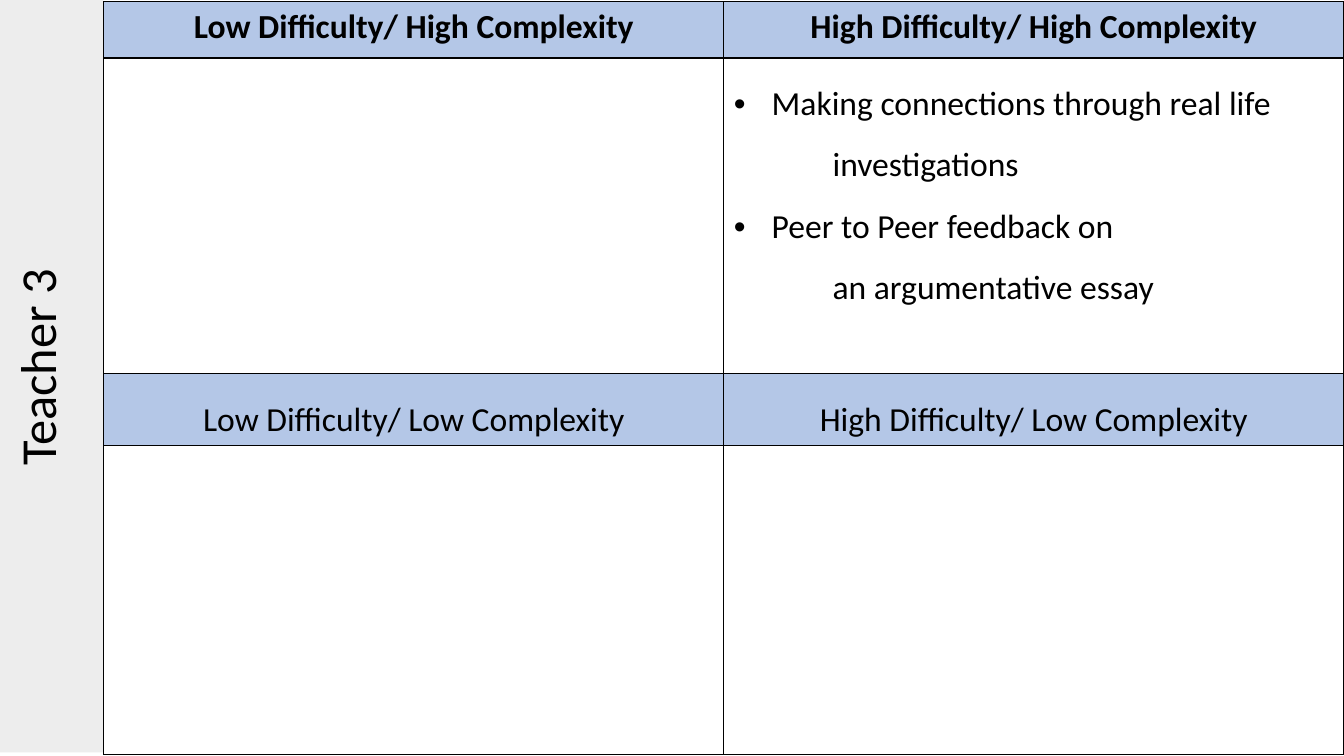
from lxml.etree import SubElement
from pptx import Presentation
from pptx.dml.color import RGBColor
from pptx.enum.shapes import MSO_SHAPE
from pptx.enum.text import MSO_ANCHOR, PP_ALIGN
from pptx.oxml.ns import qn
from pptx.util import Pt

COLORS = {"text": "000000", "border": "000000", "banner": "EDEDED",
          "heading": "B4C7E7", "body": "FFFFFF"}
FONT = "Calibri"
COLUMN_WIDTH = 442.8
ROW_HEIGHTS = [40.3, 225.4, 49.7, 221]
HEADINGS = {
    0: ["Low Difficulty/ High Complexity", "High Difficulty/ High Complexity"],
    2: ["Low Difficulty/ Low Complexity", "High Difficulty/ Low Complexity"],
}
ACTIVITIES = [
    ("Making connections through real life", "investigations"),
    ("Peer to Peer feedback on", "an argumentative essay"),
]


def set_fill(target, color):
    target.fill.solid()
    target.fill.fore_color.rgb = RGBColor.from_string(COLORS[color])


def add_run(paragraph, text, size, bold=False):
    run = paragraph.add_run()
    run.text = text
    run.font.name = FONT
    run.font.size = Pt(size)
    run.font.bold = bold
    run.font.color.rgb = RGBColor.from_string(COLORS["text"])


def add_banner(slide, text):
    shape = slide.shapes.add_shape(
        MSO_SHAPE.RECTANGLE, Pt(-238.3), Pt(225.3), Pt(550), Pt(74.2))
    shape.rotation = 270
    shape.shadow.inherit = False
    set_fill(shape, "banner")
    shape.line.fill.background()
    frame = shape.text_frame
    frame.word_wrap = True
    frame.vertical_anchor = MSO_ANCHOR.MIDDLE
    frame.margin_bottom = Pt(25.6)
    paragraph = frame.paragraphs[0]
    paragraph.alignment = PP_ALIGN.CENTER
    add_run(paragraph, text, 36)


def set_borders(cell):
    properties = cell._tc.get_or_add_tcPr()
    for side in ("a:lnL", "a:lnR", "a:lnT", "a:lnB"):
        line = SubElement(properties, qn(side), w=str(Pt(1)))
        fill = SubElement(line, qn("a:solidFill"))
        SubElement(fill, qn("a:srgbClr"), val=COLORS["border"])


def set_indent(paragraph, left, first=0, bullet=None):
    properties = paragraph._p.get_or_add_pPr()
    properties.set("marL", str(Pt(left)))
    properties.set("indent", str(Pt(first)))
    if bullet:
        SubElement(properties, qn("a:buFont"), typeface="Arial")
        SubElement(properties, qn("a:buChar"), char=bullet)


def write_heading(cell, text, is_first):
    paragraph = cell.text_frame.paragraphs[0]
    paragraph.alignment = PP_ALIGN.CENTER
    if not is_first:
        paragraph.line_spacing = 1.5
    add_run(paragraph, text, 24, bold=is_first)


def write_activities(cell):
    frame = cell.text_frame
    paragraph = frame.paragraphs[0]
    for index, (opening, continuation) in enumerate(ACTIVITIES):
        if index:
            paragraph = frame.add_paragraph()
        paragraph.line_spacing = 1.5
        set_indent(paragraph, 27, -27, "•")
        add_run(paragraph, opening, 24)
        paragraph = frame.add_paragraph()
        paragraph.line_spacing = 1.5
        set_indent(paragraph, 70.5)
        add_run(paragraph, continuation, 24)


def add_quadrant_table(slide):
    table = slide.shapes.add_table(
        len(ROW_HEIGHTS), 2, Pt(74.2), Pt(1.2),
        Pt(2 * COLUMN_WIDTH), Pt(sum(ROW_HEIGHTS))).table
    table.first_row = False
    table.horz_banding = False
    for column in table.columns:
        column.width = Pt(COLUMN_WIDTH)
    for row_index, height in enumerate(ROW_HEIGHTS):
        row = table.rows[row_index]
        row.height = Pt(height)
        for column_index, cell in enumerate(row.cells):
            set_borders(cell)
            if row_index in HEADINGS:
                set_fill(cell, "heading")
                write_heading(cell, HEADINGS[row_index][column_index], row_index == 0)
            else:
                set_fill(cell, "body")
    write_activities(table.cell(1, 1))


def main():
    presentation = Presentation()
    presentation.slide_width = Pt(960)
    presentation.slide_height = Pt(540)
    slide = presentation.slides.add_slide(presentation.slide_layouts[6])
    add_banner(slide, "Teacher 3")
    add_quadrant_table(slide)
    presentation.save("out.pptx")


if __name__ == "__main__":
    main()
